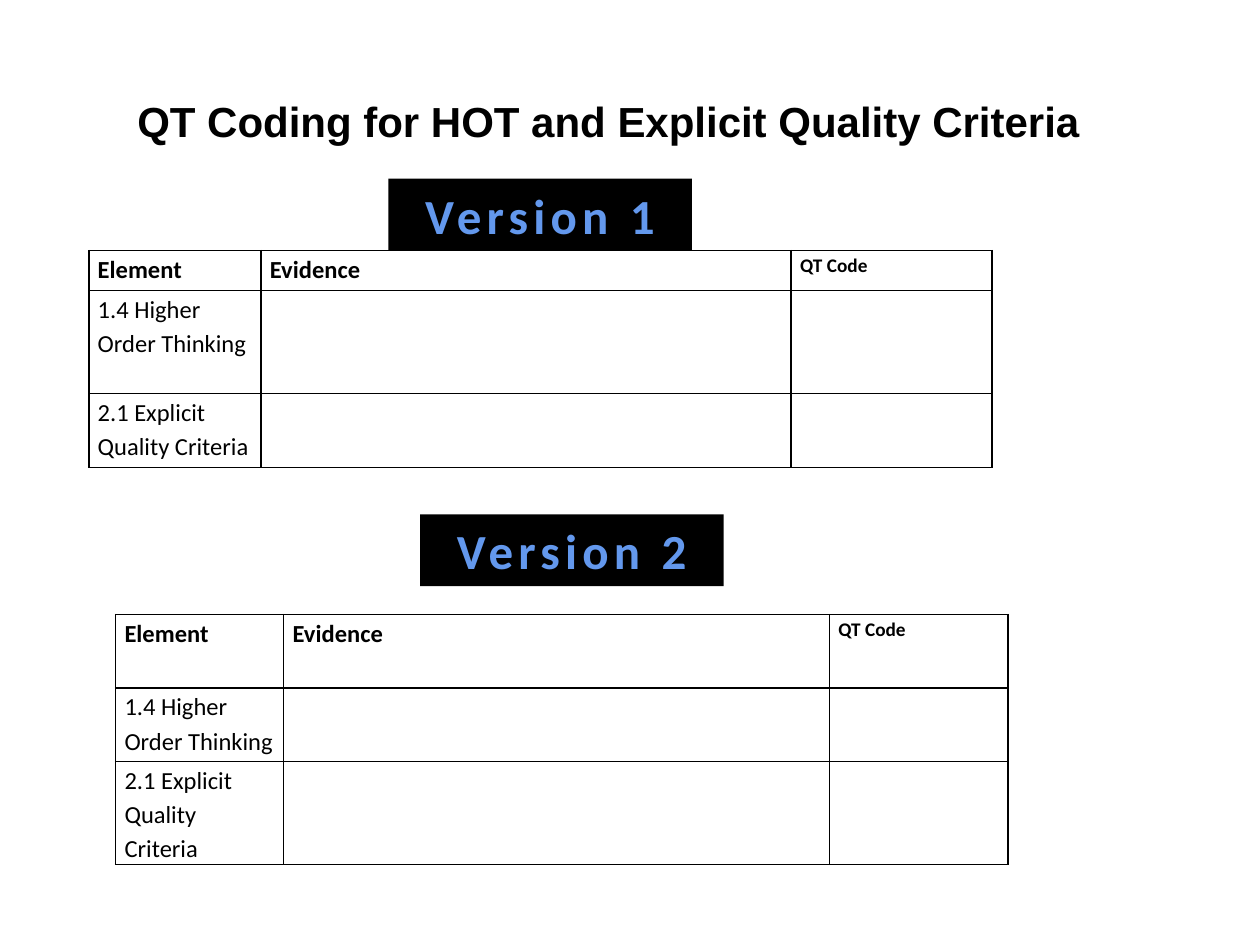
from dataclasses import dataclass

from lxml import etree
from pptx import Presentation
from pptx.dml.color import RGBColor
from pptx.enum.shapes import MSO_SHAPE
from pptx.enum.text import MSO_ANCHOR, PP_ALIGN
from pptx.oxml.ns import qn
from pptx.util import Cm, Pt

RECTANGLE = MSO_SHAPE.RECTANGLE
MIDDLE = MSO_ANCHOR.MIDDLE
CENTER, LEFT = PP_ALIGN.CENTER, PP_ALIGN.LEFT


@dataclass(frozen=True)
class Theme:
    ink: str = "000000"
    badge_text: str = "6398ED"
    title_font: str = "Arial"
    body_font: str = "Calibri"
    title_size: int = 24
    badge_size: int = 28
    body_size: int = 14
    code_size: int = 11


THEME = Theme()


def write(frame, text, *, size, font=THEME.body_font, color=THEME.ink,
          bold=False, align=LEFT, line_spacing=1.0, tracking=0):
    """Tracking is the letter spacing in points."""
    paragraph = frame.paragraphs[0]
    paragraph.alignment = align
    paragraph.line_spacing = line_spacing
    run = paragraph.add_run()
    run.text = text
    run.font.name = font
    run.font.size = Pt(size)
    run.font.bold = bold
    run.font.color.rgb = RGBColor.from_string(color)
    if tracking:
        run.font._element.set("spc", str(tracking * 100))


def add_borders(cell, color=THEME.ink, width=Pt(1)):
    properties = cell._tc.get_or_add_tcPr()
    for side in ("a:lnL", "a:lnR", "a:lnT", "a:lnB"):
        line = etree.SubElement(properties, qn(side), w=str(width))
        fill = etree.SubElement(line, qn("a:solidFill"))
        etree.SubElement(fill, qn("a:srgbClr"), val=color)


CODING_ROWS = [
    ("Element", "Evidence", "QT Code"),
    ("1.4 Higher Order Thinking", "", ""),
    ("2.1 Explicit Quality Criteria", "", ""),
]

# label, badge position, table position, column widths, row heights (cm)
VERSIONS = [
    ("Version 1", (7.83, 3.6), (1.79, 5.05), (3.47, 10.69, 4.05), (0.81, 2.07, 1.49)),
    ("Version 2", (8.47, 10.37), (2.33, 12.39), (3.39, 11, 3.6), (1.48, 1.48, 2.07)),
]

presentation = Presentation()
presentation.slide_width, presentation.slide_height = Cm(25.4), Cm(19.05)
slide = presentation.slides.add_slide(presentation.slide_layouts[5])

title = slide.shapes.title
title.left, title.top, title.width, title.height = Cm(0.84), Cm(0.84), Cm(22.86), Cm(3.18)
title.text_frame.vertical_anchor = MIDDLE
write(title.text_frame, "QT Coding for HOT and Explicit Quality Criteria",
      size=THEME.title_size, font=THEME.title_font, bold=True, align=CENTER)

for label, badge_at, table_at, widths, heights in VERSIONS:
    table = slide.shapes.add_table(
        len(heights), len(widths), *map(Cm, table_at),
        Cm(sum(widths)), Cm(sum(heights))).table
    table.first_row = table.horz_banding = False
    for column, width in zip(table.columns, widths):
        column.width = Cm(width)
    for row, height in zip(table.rows, heights):
        row.height = Cm(height)

    for row_index, texts in enumerate(CODING_ROWS):
        for column_index, text in enumerate(texts):
            cell = table.cell(row_index, column_index)
            add_borders(cell)
            cell.fill.background()
            cell.margin_left = cell.margin_right = Cm(0.18)
            cell.margin_top = cell.margin_bottom = 0
            if text:
                size = THEME.code_size if text == "QT Code" else THEME.body_size
                write(cell.text_frame, text, size=size,
                      bold=row_index == 0, line_spacing=1.15)

    badge = slide.shapes.add_shape(RECTANGLE, *map(Cm, badge_at), Cm(6.12), Cm(1.45))
    badge.shadow.inherit = False
    badge.fill.solid()
    badge.fill.fore_color.rgb = RGBColor.from_string(THEME.ink)
    badge.line.fill.background()
    badge.text_frame.word_wrap = True
    badge.text_frame.vertical_anchor = MIDDLE
    write(badge.text_frame, label, size=THEME.badge_size, color=THEME.badge_text,
          bold=True, align=CENTER, tracking=3)

presentation.save("out.pptx")
